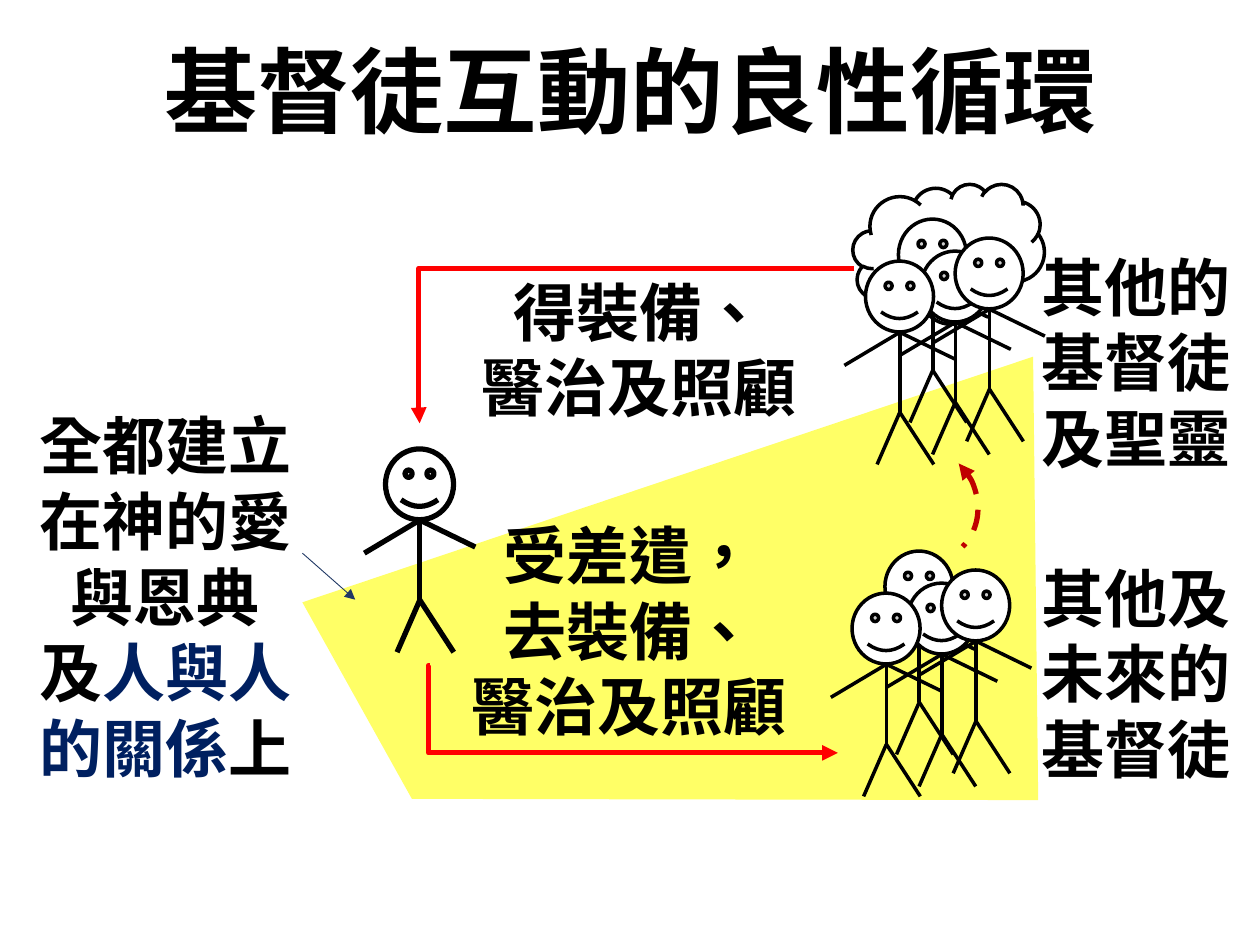
"""Build the slide on the virtuous circle of Christian interaction."""
from lxml.etree import SubElement
from pptx import Presentation
from pptx.dml.color import RGBColor
from pptx.enum.dml import MSO_LINE_DASH_STYLE as Dash
from pptx.enum.shapes import MSO_CONNECTOR as Connector, MSO_SHAPE as Shape
from pptx.enum.text import MSO_ANCHOR as Anchor, MSO_AUTO_SIZE as AutoSize, PP_ALIGN as Align
from pptx.oxml.ns import qn
from pptx.util import Pt

BLACK, WHITE, NAVY, RED = "000000", "FFFFFF", "002060", "FF0000"


def color(value):
    return RGBColor.from_string(value)


def write(frame, text, size=36, ink=BLACK, font="Roboto", bold=True):
    for index, part in enumerate(text.split("\n")):
        paragraph = frame.add_paragraph() if index else frame.paragraphs[-1]
        paragraph.alignment = Align.CENTER
        run = paragraph.add_run()
        run.text = part
        run.font.size, run.font.bold, run.font.name = Pt(size), bold, font
        run.font.color.rgb = color(ink)
        properties = run._r.get_or_add_rPr()
        properties.set("lang", "zh-TW")
        SubElement(properties, qn("a:ea"), typeface=font)


class CircleSlide:
    def __init__(self, presentation):
        self.slide = presentation.slides.add_slide(presentation.slide_layouts[5])
        self.shapes = self.slide.shapes

    def title(self, text, left, top, width, height):
        title = self.shapes.title
        title.left, title.top, title.width, title.height = map(Pt, (left, top, width, height))
        frame = title.text_frame
        frame.word_wrap, frame.auto_size = False, AutoSize.NONE
        frame.vertical_anchor = Anchor.MIDDLE
        write(frame, text, size=53.3)

    def label(self, runs, left, top, width, height):
        frame = self.shapes.add_textbox(*map(Pt, (left, top, width, height))).text_frame
        frame.word_wrap, frame.auto_size = False, AutoSize.SHAPE_TO_FIT_TEXT
        for text, ink in runs:
            write(frame, text, ink=ink)

    def paint(self, shape, fill=None, line=None, weight=2):
        shape.shadow.inherit = False
        if fill:
            shape.fill.solid()
            shape.fill.fore_color.rgb = color(fill)
        else:
            shape.fill.background()
        if line:
            self.stroke(shape, line, weight)
        else:
            shape.line.fill.background()

    def stroke(self, shape, ink, weight, arrow=None):
        shape.line.color.rgb = color(ink)
        shape.line.width = Pt(weight)
        if arrow:
            SubElement(shape.line._get_or_add_ln(), qn(f"a:{arrow}"), type="triangle")

    def polygon(self, points, fill):
        start, *rest = [(Pt(x), Pt(y)) for x, y in points]
        builder = self.shapes.build_freeform(*start)
        builder.add_line_segments(rest, close=True)
        self.paint(builder.convert_to_shape(), fill)

    def outline(self, kind, left, top, width, height, weight=2):
        shape = self.shapes.add_shape(kind, *map(Pt, (left, top, width, height)))
        self.paint(shape, WHITE, BLACK, weight)

    def line(self, start, end, ink=BLACK, weight=2, arrow=None, bend=None):
        kind = Connector.STRAIGHT if bend is None else Connector.ELBOW
        connector = self.shapes.add_connector(kind, *map(Pt, (*start, *end)))
        properties = connector._element.spPr
        if bend is not None:
            guides = properties.find(qn("a:prstGeom")).get_or_add_avLst()
            SubElement(guides, qn("a:gd"), name="adj1", fmla=f"val {bend}")
        self.stroke(connector, ink, weight, arrow)
        SubElement(properties, qn("a:effectLst"))

    def arc_arrow(self, left, top, width, height, rotation, ink, weight):
        arc = self.shapes.add_shape(Shape.ARC, *map(Pt, (left, top, width, height)))
        arc.rotation = rotation
        self.paint(arc)
        arc.line.dash_style = Dash.DASH
        self.stroke(arc, ink, weight, "headEnd")

    def person(self, left, top, weight=2):
        self.outline(Shape.SMILEY_FACE, left, top, 38.9, 40.5, weight)
        x, neck = left + 19.6, top + 40.7
        hip = neck + 45.7
        for joint, dx, dy in ((neck, -31.7, 18.9), (neck, 0, 45.7), (neck, 31.7, 15.4),
                              (hip, 19.4, 29.8), (hip, -13, 29.8)):
            self.line((x, joint), (x + dx, joint + dy), weight=weight)

    def crowd(self, left, top):
        for dx, dy in ((18.8, 0), (31.7, 18.3), (51.2, 10.8), (0, 24)):
            self.person(left + dx, top + dy)


def main():
    presentation = Presentation()
    presentation.slide_width, presentation.slide_height = Pt(720), Pt(540)
    circle = CircleSlide(presentation)
    circle.title("基督徒互動的良性循環", 83.5, 15.1, 553.7, 72)
    circle.polygon(((590.4, 203.8), (172.8, 344.2), (235.4, 456.5), (593.3, 457.2)), "FFFF66")
    circle.line((172.8, 316.1), (203, 342.7), "203864", 0.5, "tailEnd")
    circle.person(220.3, 256.5, weight=3)
    circle.outline(Shape.CLOUD, 487.4, 105.1, 109.4, 79.9)
    circle.crowd(494.6, 125.2)
    circle.crowd(486.9, 314.9)
    circle.label([("其他的\n基督徒\n及聖靈", BLACK)], 587.5, 138.2, 123.8, 138.2)
    circle.label([("其他及\n未來的\n基督徒", BLACK)], 587.5, 316.1, 123.8, 138.2)
    circle.label([("全都建立\n在神的愛\n與恩典\n及", BLACK), ("人與人\n的關係", NAVY), ("上", BLACK)],
                 14.4, 229, 159.8, 225.4)
    circle.label([("得裝備、\n醫治及照顧", BLACK)], 267.1, 152.6, 196.6, 94.3)
    circle.label([("受差遣，\n去裝備、\n醫治及照顧", BLACK)], 261.4, 291.6, 196.6, 138.2)
    circle.line((488.2, 153.4), (239.8, 241.9), RED, 3, "tailEnd", bend=100200)
    circle.line((245.5, 380.2), (478.8, 430.2), RED, 3, "tailEnd", bend=-300)
    circle.arc_arrow(490.3, 255.6, 69.8, 64.8, 44.5, "C00000", 3)
    presentation.save("out.pptx")


if __name__ == "__main__":
    main()
